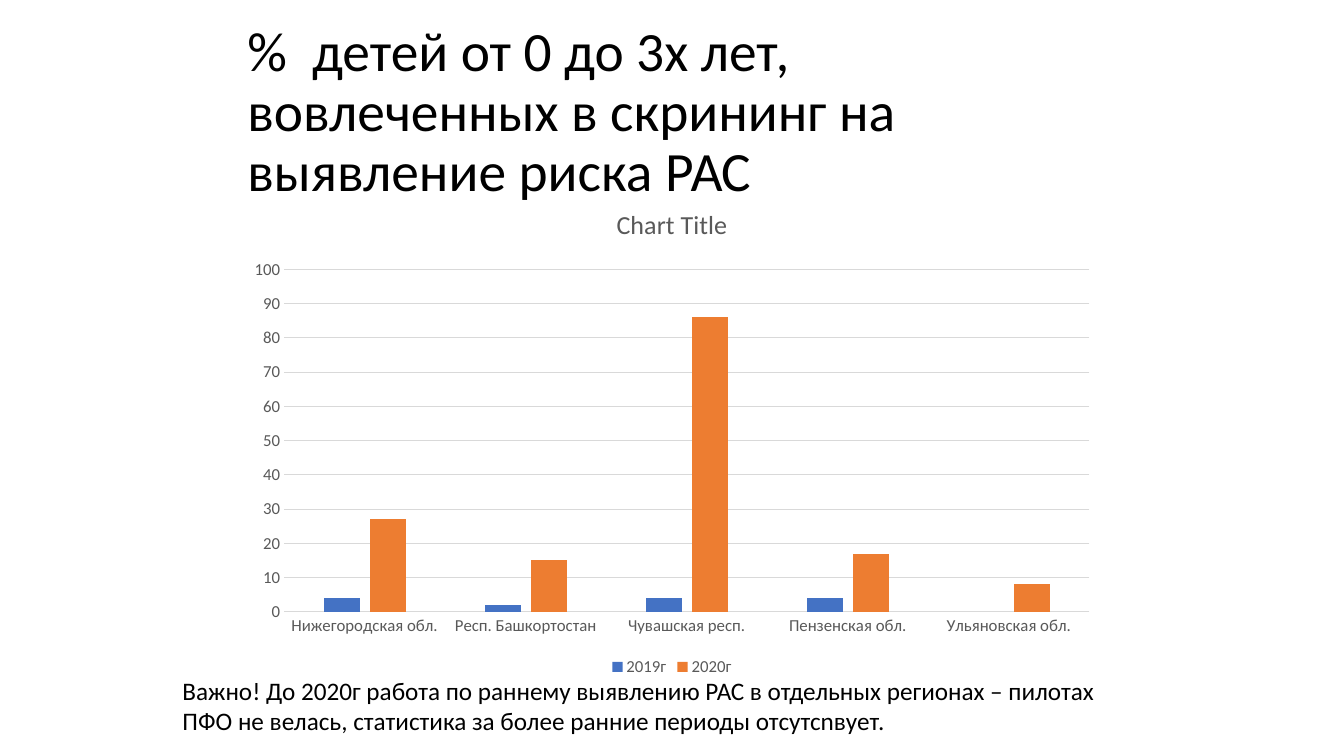
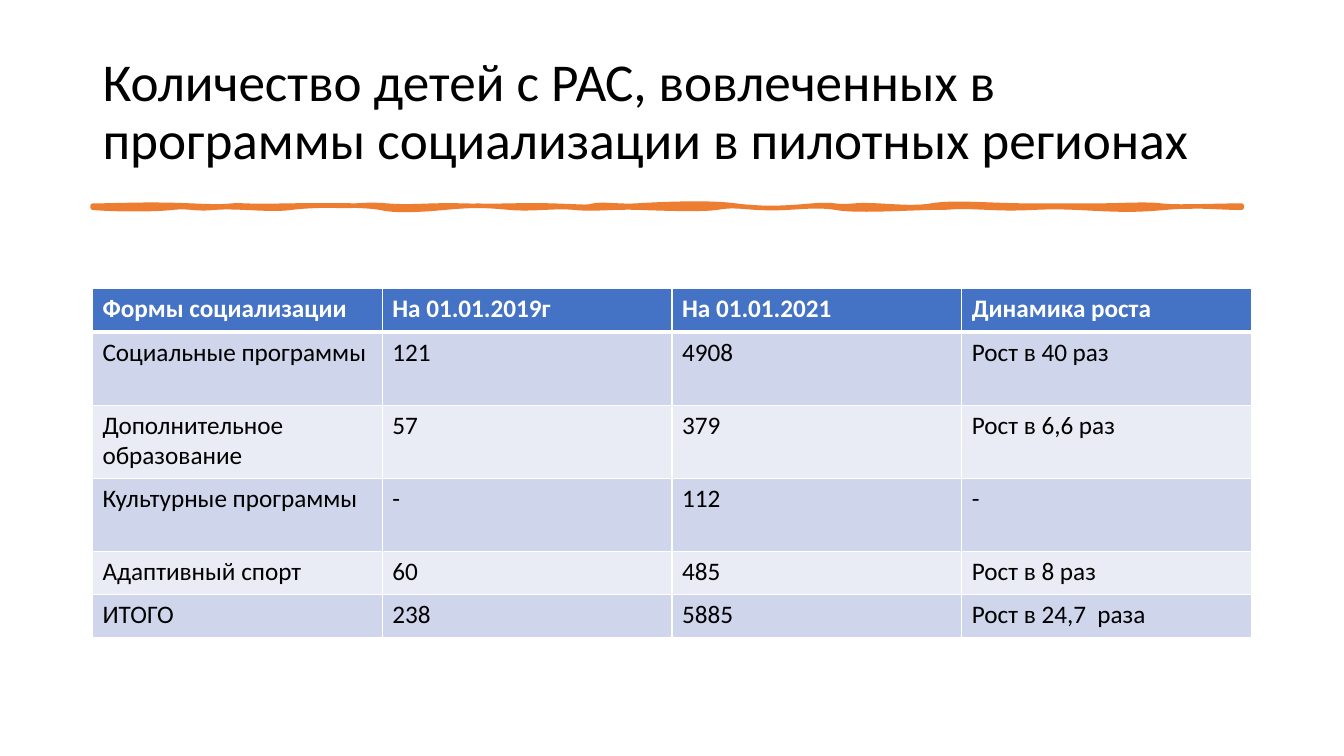
from lxml import etree
from pptx import Presentation
from pptx.chart.data import CategoryChartData
from pptx.dml.color import RGBColor
from pptx.enum import chart as ch, text as tx
from pptx.oxml.ns import qn
from pptx.util import Cm, Pt

FONT = "Calibri"
HUES = {
    "black": "000000", "white": "FFFFFF", "gray": "595959", "grid": "D9D9D9",
    "blue": "4472C4", "orange": "ED7D31", "dark": "CFD5EA", "light": "E9EBF5",
}

# Left, top, width, height in cm
HEAD_1 = (5.98, 1.02, 21.9, 3.68)
CHART = (5.98, 4.69, 21.91, 12.47)
NOTE = (4.35, 16.88, 23.55, 1.8)
HEAD_2 = (2.33, 1.01, 29.21, 3.68)
TABLE = (2.33, 7.26, 29.21, 8.79)

TITLE_1 = "%  детей от 0 до 3х лет, вовлеченных в скрининг на выявление риска РАС"
REGIONS = ["Нижегородская обл.", "Респ. Башкортостан", "Чувашская респ.",
           "Пензенская обл.", "Ульяновская обл."]
SERIES = [
    ("2019г", [4, 2, 4, 4, None], "blue"),
    ("2020г", [27, 15, 86, 17, 8], "orange"),
]
NOTE_TEXT = ("Важно! До 2020г работа по раннему выявлению РАС в отдельных регионах "
             "– пилотах ПФО не велась, статистика за более ранние периоды отсутсnвует.")

TITLE_2 = "Количество детей с РАС, вовлеченных в программы социализации в пилотных регионах"
ROWS = [
    ("Формы социализации", "На 01.01.2019г", "На 01.01.2021", "Динамика роста"),
    ("Социальные программы", "121", "4908", "Рост в 40 раз"),
    ("Дополнительное образование", "57", "379", "Рост в 6,6 раз"),
    ("Культурные программы", "-", "112", "-"),
    ("Адаптивный спорт", "60", "485", "Рост в 8 раз"),
    ("ИТОГО", "238", "5885", "Рост в 24,7  раза"),
]
HEIGHTS = [1.11, 1.84, 1.84, 1.84, 1.09, 1.09]

# Brush stroke in 1/100 inch: each curve is two control points and an end x
UNIT = Cm(0.0254)
LEFT, UPPER, LOWER = 92, 204, 206
TOP_EDGE = [
    (119, 204, 144, 202, 190), (237, 206, 220, 203, 244), (267, 205, 303, 203, 331),
    (360, 205, 359, 202, 384), (410, 206, 423, 203, 460), (498, 205, 514, 203, 548),
    (581, 205, 581, 206, 589), (598, 202, 615, 205, 631), (647, 203, 701, 200, 730),
    (759, 208, 781, 206, 806), (831, 202, 827, 206, 848), (868, 202, 901, 208, 924),
    (947, 200, 982, 204, 1023), (1063, 204, 1063, 204, 1087),
    (1112, 204, 1136, 202, 1152), (1168, 206, 1203, 204, 1232),
]
LOW_EDGE = [
    (1205, 206, 1189, 203, 1156), (1122, 209, 1110, 208, 1068),
    (1027, 204, 1023, 208, 981), (939, 204, 952, 206, 928), (904, 206, 851, 210, 829),
    (806, 202, 782, 208, 753), (724, 204, 725, 204, 711), (698, 208, 661, 207, 635),
    (609, 205, 590, 208, 570), (551, 204, 528, 208, 506), (483, 204, 473, 203, 441),
    (409, 209, 390, 209, 377), (363, 203, 310, 203, 289), (268, 209, 235, 204, 213),
    (192, 208, 189, 204, 171), (154, 208, 114, 208, 92),
]


def rgb(hue):
    return RGBColor.from_string(HUES[hue])


def place(box):
    return [Cm(v) for v in box]


def style(font, size, hue, bold=False):
    font.name, font.size, font.bold = FONT, Pt(size), bold
    font.color.rgb = rgb(hue)


def write(frame, words, size, hue="black", bold=False):
    par = frame.paragraphs[0]
    run = par.add_run()
    run.text = words
    style(run.font, size, hue, bold)
    return par


def add_slide(deck, words, box, size):
    """Add a title-only slide with the shared title style."""
    slide = deck.slides.add_slide(deck.slide_layouts[5])
    head = slide.shapes.title
    head.left, head.top, head.width, head.height = place(box)
    frame = head.text_frame
    frame.auto_size = tx.MSO_AUTO_SIZE.NONE
    frame.vertical_anchor = tx.MSO_ANCHOR.MIDDLE
    par = write(frame, words, size)
    par.alignment = tx.PP_ALIGN.LEFT
    par.line_spacing = 0.9
    return slide


def add_head(chart, size, hue):
    """Show the automatic chart title, styled without text of its own."""
    chart.has_title = True
    title = chart.chart_title._element
    body = etree.SubElement(title, qn("c:txPr"))
    etree.SubElement(body, qn("a:bodyPr"))
    par = etree.SubElement(body, qn("a:p"))
    props = etree.SubElement(par, qn("a:pPr"))
    font = etree.SubElement(props, qn("a:defRPr"), sz=str(round(size * 100)), b="0")
    fill = etree.SubElement(font, qn("a:solidFill"))
    etree.SubElement(fill, qn("a:srgbClr"), val=HUES[hue])
    etree.SubElement(font, qn("a:latin"), typeface=FONT)
    etree.SubElement(par, qn("a:endParaRPr"), lang="ru-RU")


def add_chart(slide):
    data = CategoryChartData()
    data.categories = REGIONS
    for name, vals, _ in SERIES:
        data.add_series(name, vals)
    chart = slide.shapes.add_chart(
        ch.XL_CHART_TYPE.COLUMN_CLUSTERED, *place(CHART), data).chart
    style(chart.font, 10, "black")
    add_head(chart, 18.6, "gray")

    plot = chart.plots[0]
    plot.gap_width, plot.overlap, plot.vary_by_categories = 219, -27, False
    for bars, (_, _, hue) in zip(plot.series, SERIES):
        bars.invert_if_negative = False
        bars.format.fill.solid()
        bars.format.fill.fore_color.rgb = rgb(hue)

    cats, vals = chart.category_axis, chart.value_axis
    for axis in (cats, vals):
        axis.major_tick_mark = axis.minor_tick_mark = ch.XL_TICK_MARK.NONE
        style(axis.tick_labels.font, 12, "gray")
    vals.format.line.fill.background()
    for line in (cats.format.line, vals.major_gridlines.format.line):
        line.color.rgb = rgb("grid")
        line.width = Pt(0.75)

    chart.has_legend = True
    chart.legend.position = ch.XL_LEGEND_POSITION.BOTTOM
    chart.legend.include_in_layout = False
    style(chart.legend.font, 12, "gray")


def add_note(slide):
    frame = slide.shapes.add_textbox(*place(NOTE)).text_frame
    frame.word_wrap = True
    frame.auto_size = tx.MSO_AUTO_SIZE.SHAPE_TO_FIT_TEXT
    write(frame, NOTE_TEXT, 18)


def bend(line, points):
    """Turn a straight path segment into a Bezier curve."""
    line.tag = qn("a:cubicBezTo")
    curve = etree.Element(qn("a:cubicBezTo"))
    for x, y in points:
        etree.SubElement(curve, qn("a:pt"), x=str((x - LEFT) * UNIT),
                         y=str((y - UPPER) * UNIT))
    line.getparent().replace(line, curve)


def add_stroke(slide):
    right = TOP_EDGE[-1][-1]
    curves = [((a, b), (c, d), (end, y))
              for y, side in ((UPPER, TOP_EDGE), (LOWER, LOW_EDGE))
              for a, b, c, d, end in side]
    ends = [curve[-1] for curve in curves]
    turn = len(TOP_EDGE)
    ends.insert(turn, (right, LOWER))
    pen = slide.shapes.build_freeform(LEFT * UNIT, UPPER * UNIT)
    pen.add_line_segments([(x * UNIT, y * UNIT) for x, y in ends], close=True)
    brush = pen.convert_to_shape()
    lines = list(brush._element.iter(qn("a:lnTo")))
    for line, curve in zip(lines[:turn] + lines[turn + 1:], curves):
        bend(line, curve)
    brush.shadow.inherit = False
    brush.fill.solid()
    brush.fill.fore_color.rgb = rgb("orange")
    brush.line.color.rgb = rgb("orange")
    brush.line.width = Pt(3.25)


def edge(cell, top, low):
    """Draw white borders; top and low are widths in points."""
    props = cell._tc.get_or_add_tcPr()
    for side, width in (("L", 1), ("R", 1), ("T", top), ("B", low)):
        line = etree.SubElement(props, qn(f"a:ln{side}"), w=str(Pt(width)))
        fill = etree.SubElement(line, qn("a:solidFill"))
        etree.SubElement(fill, qn("a:srgbClr"), val=HUES["white"])


def add_table(slide):
    table = slide.shapes.add_table(len(ROWS), len(ROWS[0]), *place(TABLE)).table
    for r, row in enumerate(ROWS):
        table.rows[r].height = Cm(HEIGHTS[r])
        first = r == 0
        fill = "blue" if first else "dark" if r % 2 else "light"
        for c, words in enumerate(row):
            cell = table.cell(r, c)
            edge(cell, 3 if r == 1 else 1, 3 if first else 1)
            cell.fill.solid()
            cell.fill.fore_color.rgb = rgb(fill)
            write(cell.text_frame, words, 18, "white" if first else "black", first)


def main():
    deck = Presentation()
    deck.slide_width, deck.slide_height = Cm(33.87), Cm(19.05)

    slide = add_slide(deck, TITLE_1, HEAD_1, 39.6)
    add_chart(slide)
    add_note(slide)

    slide = add_slide(deck, TITLE_2, HEAD_2, 38)
    add_stroke(slide)
    add_table(slide)

    deck.save("out.pptx")


if __name__ == "__main__":
    main()
